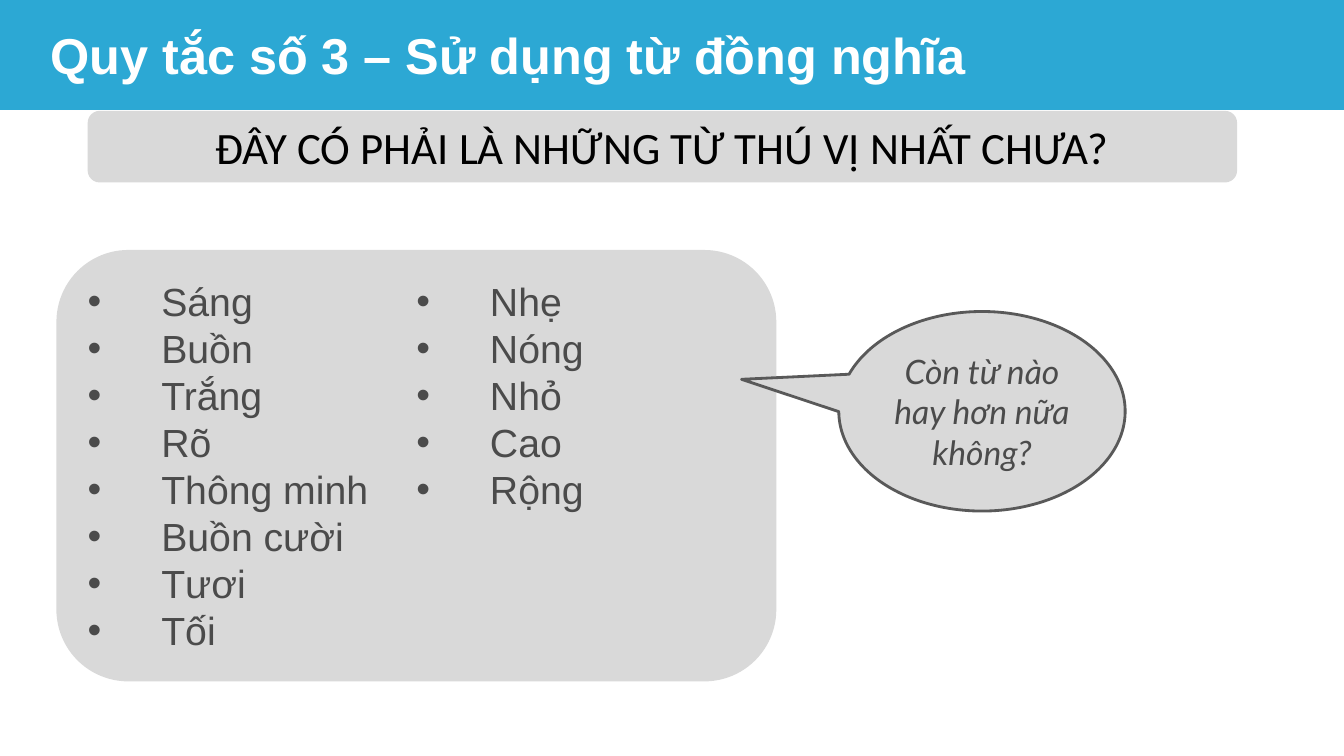
"""Build a slide that invites learners to replace plain words with synonyms."""
import pptx
import pptx.dml.color
import pptx.enum.shapes
import pptx.enum.text
import pptx.util

Inches = pptx.util.Inches
Shape = pptx.enum.shapes.MSO_SHAPE
Align = pptx.enum.text.PP_ALIGN
Anchor = pptx.enum.text.MSO_ANCHOR

BLUE, GREY, OUTLINE = "2CA8D4", "D9D9D9", "595959"
WHITE, BLACK, INK = "FFFFFF", "000000", "4B4B4B"

WORDS = ["Sáng", "Buồn", "Trắng", "Rõ", "Thông minh", "Buồn cười", "Tươi",
         "Tối", "Nhẹ", "Nóng", "Nhỏ", "Cao", "Rộng"]


def colour(value):
    return pptx.dml.color.RGBColor.from_string(value)


class SynonymSlide:
    def __init__(self, deck):
        self.page = deck.slides.add_slide(deck.slide_layouts[1])

    def fill_text(self, box, lines, size, font, ink, align,
                  anchor=Anchor.MIDDLE, bold=False, italic=False):
        frame = box.text_frame
        frame.text = "\n".join(lines)
        frame.word_wrap = True
        frame.auto_size = pptx.enum.text.MSO_AUTO_SIZE.NONE
        frame.vertical_anchor = anchor
        for para in frame.paragraphs:
            para.alignment = align
            para.space_before = pptx.util.Pt(0)
            para.font.size = pptx.util.Pt(size)
            para.font.name = font
            para.font.bold = bold
            para.font.italic = italic
            para.font.color.rgb = colour(ink)

    def shape(self, kind, place, fill, line=None):
        box = self.page.shapes.add_shape(kind, *map(Inches, place))
        box.shadow.inherit = False
        box.fill.solid()
        box.fill.fore_color.rgb = colour(fill)
        if line:
            box.line.color.rgb = colour(line)
            box.line.width = pptx.util.Pt(2)
        else:
            box.line.fill.background()
        return box

    def placeholder(self, index, place):
        box = self.page.placeholders[index]
        box.left, box.top, box.width, box.height = map(Inches, place)
        box.element.getparent().append(box.element)
        return box

    def title(self, text, place):
        box = self.placeholder(0, place)
        self.fill_text(box, [text], 36, "Arial", WHITE, Align.LEFT, bold=True)

    def word_list(self, words, place, columns, indent):
        box = self.placeholder(1, place)
        box.text_frame._txBody.bodyPr.set("numCol", str(columns))
        self.fill_text(box, words, 28, "Arial", INK, Align.LEFT, Anchor.TOP)
        for para in box.text_frame.paragraphs:
            properties = para._p.get_or_add_pPr()
            properties.set("marL", str(Inches(indent)))
            properties.set("indent", str(-Inches(indent)))

    def callout(self, text, place, tip):
        box = self.shape(Shape.OVAL_CALLOUT, place, GREY, OUTLINE)
        box.adjustments[0], box.adjustments[1] = tip
        self.fill_text(box, [text], 24, "Lato", INK, Align.CENTER, italic=True)


def main():
    deck = pptx.Presentation()
    deck.slide_width, deck.slide_height = Inches(13.33), Inches(7.5)
    slide = SynonymSlide(deck)
    slide.shape(Shape.RECTANGLE, (0, 0, 13.33, 1.09), BLUE)
    slide.title("Quy tắc số 3 – Sử dụng từ đồng nghĩa", (0.4, 0.18, 10.76, 0.71))
    banner = slide.shape(Shape.ROUNDED_RECTANGLE, (0.87, 1.1, 11.4, 0.71), GREY)
    slide.fill_text(banner, ["ĐÂY CÓ PHẢI LÀ NHỮNG TỪ THÚ VỊ NHẤT CHƯA?"],
                    32, "Calibri", BLACK, Align.CENTER)
    slide.shape(Shape.ROUNDED_RECTANGLE, (0.56, 2.48, 7.14, 4.28), GREY)
    slide.word_list(WORDS, (0.77, 2.7, 6.72, 3.86), columns=2, indent=0.73)
    slide.callout("Còn từ nào hay hơn nữa không?", (8.32, 3.09, 2.84, 1.98),
                  tip=(-0.84, -0.16))
    deck.save("out.pptx")


if __name__ == "__main__":
    main()
